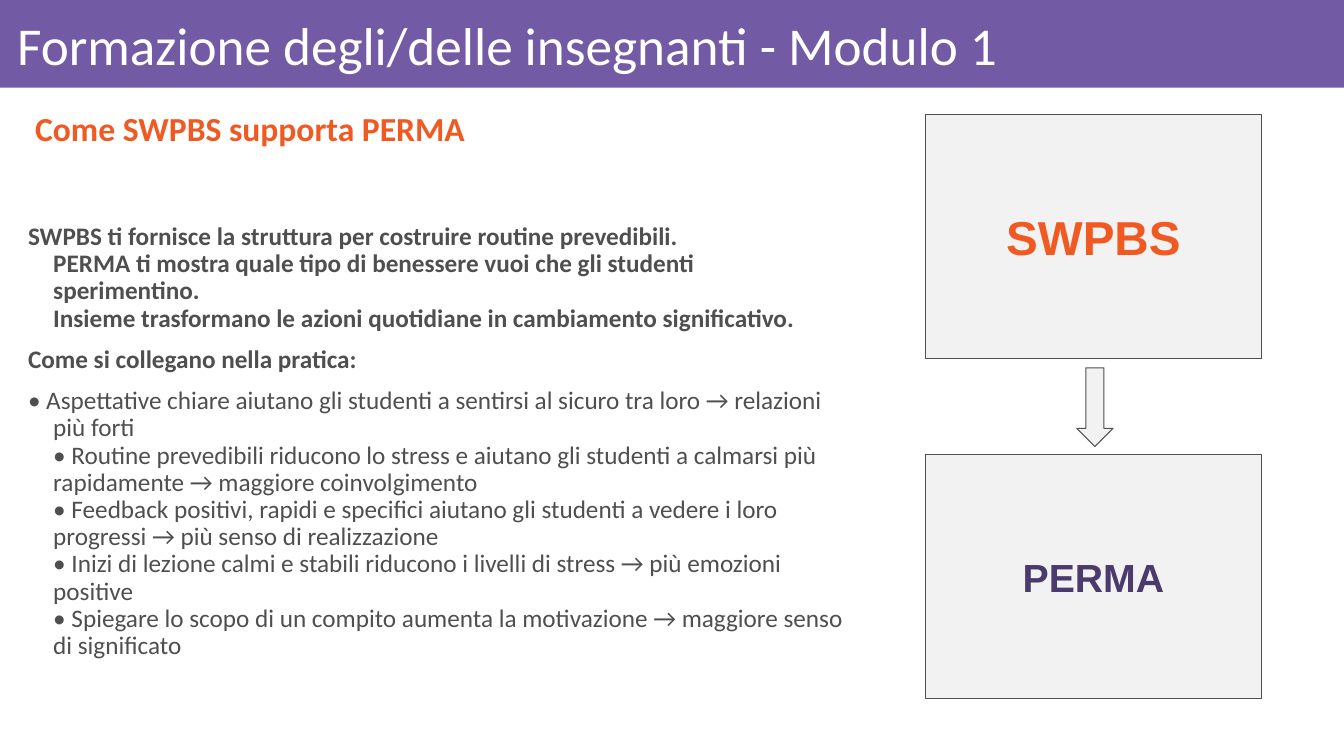
"""Build the slide on how SWPBS supports PERMA."""
from pptx import Presentation
from pptx.dml.color import RGBColor
from pptx.enum.shapes import MSO_SHAPE
from pptx.enum.text import MSO_ANCHOR, PP_ALIGN
from pptx.util import Inches, Pt

RECTANGLE, DOWN_ARROW = MSO_SHAPE.RECTANGLE, MSO_SHAPE.DOWN_ARROW
TOP, MIDDLE = MSO_ANCHOR.TOP, MSO_ANCHOR.MIDDLE
LEFT, CENTER, JUSTIFY = PP_ALIGN.LEFT, PP_ALIGN.CENTER, PP_ALIGN.JUSTIFY

COLORS = {
    "purple": "735AA5",
    "white": "FFFFFF",
    "gray": "4F4F50",
    "light": "F2F2F2",
    "orange": "F05A22",
    "violet": "4B3B6C",
}

INTRO = """SWPBS ti fornisce la struttura per costruire routine prevedibili.
PERMA ti mostra quale tipo di benessere vuoi che gli studenti sperimentino.
Insieme trasformano le azioni quotidiane in cambiamento significativo."""
PRACTICE = """• Aspettative chiare aiutano gli studenti a sentirsi al sicuro tra loro → relazioni più forti
• Routine prevedibili riducono lo stress e aiutano gli studenti a calmarsi più rapidamente → maggiore coinvolgimento
• Feedback positivi, rapidi e specifici aiutano gli studenti a vedere i loro progressi → più senso di realizzazione
• Inizi di lezione calmi e stabili riducono i livelli di stress → più emozioni positive
• Spiegare lo scopo di un compito aumenta la motivazione → maggiore senso di significato"""

presentation = Presentation()
presentation.slide_width = Inches(13.33)
presentation.slide_height = Inches(7.5)
slide = presentation.slides.add_slide(presentation.slide_layouts[6])


def add_box(kind, left, top, width, height, fill, line=None):
    """Add a filled preset shape, outlined if a line colour is given."""
    shape = slide.shapes.add_shape(
        kind, Inches(left), Inches(top), Inches(width), Inches(height))
    shape.shadow.inherit = False
    shape.fill.solid()
    shape.fill.fore_color.rgb = RGBColor.from_string(COLORS[fill])
    if line:
        shape.line.color.rgb = RGBColor.from_string(COLORS[line])
        shape.line.width = Pt(0.75)
    else:
        shape.line.fill.background()
    return shape


def write(shape, paragraphs, size, color, font="Calibri", anchor=MIDDLE, align=LEFT,
          inset=(0.1, 0.05), spacing=0.9, before=0, hanging=False):
    """Fill a shape with (text, bold) paragraphs in one format."""
    frame = shape.text_frame
    frame.word_wrap = True
    frame.vertical_anchor = anchor
    frame.margin_left = frame.margin_right = Inches(inset[0])
    frame.margin_top = frame.margin_bottom = Inches(inset[1])
    for index, (text, bold) in enumerate(paragraphs):
        paragraph = frame.add_paragraph() if index else frame.paragraphs[0]
        paragraph.text = text
        paragraph.alignment = align
        paragraph.line_spacing = spacing
        paragraph.space_before = Pt(before)
        if hanging:
            properties = paragraph._p.get_or_add_pPr()
            properties.set("marL", str(Inches(0.5)))
            properties.set("indent", str(Inches(-0.25)))
        for run in paragraph.runs:
            run.font.name = font
            run.font.size = Pt(size)
            run.font.bold = bold
            run.font.color.rgb = RGBColor.from_string(COLORS[color])


add_box(RECTANGLE, 0, 0, 13.33, 0.87, "purple")
title = slide.shapes.add_textbox(Inches(0.11), Inches(0.09), Inches(13.06), Inches(0.78))
write(title, [("Formazione degli/delle insegnanti - Modulo 1", False)], 38, "white",
      inset=(0.06, 0.06))

body = slide.shapes.add_textbox(Inches(-0.07), Inches(2.17), Inches(8.54), Inches(5.78))
write(body, [(INTRO, True), ("Come si collegano nella pratica:", True), (PRACTICE, False)],
      18, "gray", anchor=TOP, before=10, hanging=True)

for label, top, size, color in (("SWPBS", 1.14, 34, "orange"), ("PERMA", 4.51, 28, "violet")):
    card = add_box(RECTANGLE, 9.18, top, 3.33, 2.42, "light", "gray")
    write(card, [(label, True)], size, color, font="Arial", align=CENTER,
          inset=(0.1, 0.1), spacing=1.0)

add_box(DOWN_ARROW, 10.68, 3.65, 0.36, 0.78, "light", "gray")

subtitle = slide.shapes.add_textbox(Inches(0), Inches(1), Inches(13.06), Inches(0.6))
write(subtitle, [("Come SWPBS supporta PERMA", True)], 24, "orange", align=JUSTIFY,
      before=10, hanging=True)

presentation.save("out.pptx")
